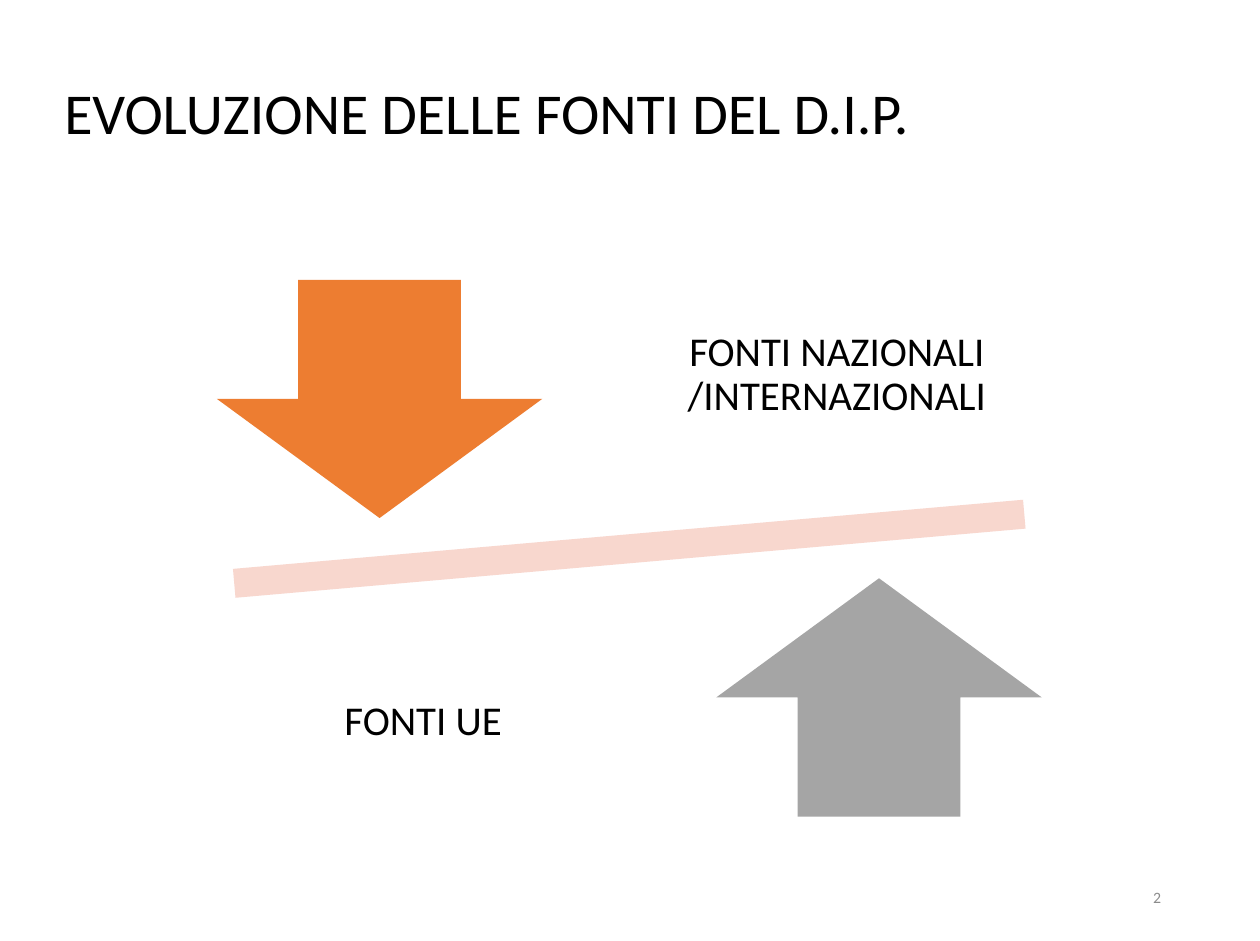
from pptx import Presentation
from pptx.dml.color import RGBColor
from pptx.enum.shapes import MSO_SHAPE as Shape
from pptx.enum.text import MSO_ANCHOR as Anchor, MSO_AUTO_SIZE as AutoSize, PP_ALIGN as Align
from pptx.util import Inches, Pt


def colour(value):
    return RGBColor.from_string(value)


class SlideBuilder:
    """Hold the text style and the current page, and add elements to it."""

    font = "Calibri"
    ink = "000000"

    def __init__(self, page):
        self.page = page

    def fill_text(self, box, text, size, align, ink=None, inset=0.1, spacing=1.0):
        frame = box.text_frame
        frame.word_wrap = True
        frame.auto_size = AutoSize.NONE
        frame.vertical_anchor = Anchor.MIDDLE
        frame.margin_left = frame.margin_right = Inches(inset)
        frame.margin_top = frame.margin_bottom = Inches(inset / 2)
        para = frame.paragraphs[0]
        para.alignment = align
        para.line_spacing = spacing
        run = para.add_run()
        run.text = text
        run.font.name = self.font
        run.font.size = Pt(size)
        run.font.color.rgb = colour(ink or self.ink)

    def title(self, text, left, top, width, height):
        box = self.page.shapes.title
        box.left, box.top = Inches(left), Inches(top)
        box.width, box.height = Inches(width), Inches(height)
        self.fill_text(box, text, 31.1, Align.JUSTIFY, spacing=0.9)

    def text(self, text, left, top, width, height, size, align, **style):
        box = self.page.shapes.add_textbox(
            Inches(left), Inches(top), Inches(width), Inches(height))
        self.fill_text(box, text, size, align, **style)

    def label(self, text, left, top):
        self.text(text, left, top, 2.6, 1.87, 22, Align.CENTER, inset=0.17, spacing=0.9)

    def shape(self, kind, left, top, width, height, fill, rotation=0):
        shape = self.page.shapes.add_shape(
            kind, Inches(left), Inches(top), Inches(width), Inches(height))
        shape.rotation = rotation
        shape.shadow.inherit = False
        shape.fill.solid()
        shape.fill.fore_color.rgb = colour(fill)
        shape.line.fill.background()

    def arrow(self, kind, left, top, fill):
        self.shape(kind, left, top, 2.43, 1.78, fill)


def main():
    deck = Presentation()
    deck.slide_width, deck.slide_height = Inches(9.41), Inches(7.03)
    slide = SlideBuilder(deck.slides.add_slide(deck.slide_layouts[5]))
    slide.title("EVOLUZIONE DELLE FONTI DEL D.I.P.", 0.38, 0.28, 8.47, 1.17)
    slide.shape(Shape.MATH_MINUS, 0.67, 3.64, 8.06, 0.92, "F8D7CE", rotation=355)
    slide.arrow(Shape.DOWN_ARROW, 1.62, 2.09, "ED7D31")
    slide.label("FONTI NAZIONALI /INTERNAZIONALI", 4.95, 1.87)
    slide.arrow(Shape.UP_ARROW, 5.35, 4.32, "A5A5A5")
    slide.label("FONTI UE", 1.86, 4.46)
    slide.text("2", 6.65, 6.52, 2.12, 0.37, 8.5, Align.RIGHT, ink="8C8C8C")
    deck.save("out.pptx")


if __name__ == "__main__":
    main()
